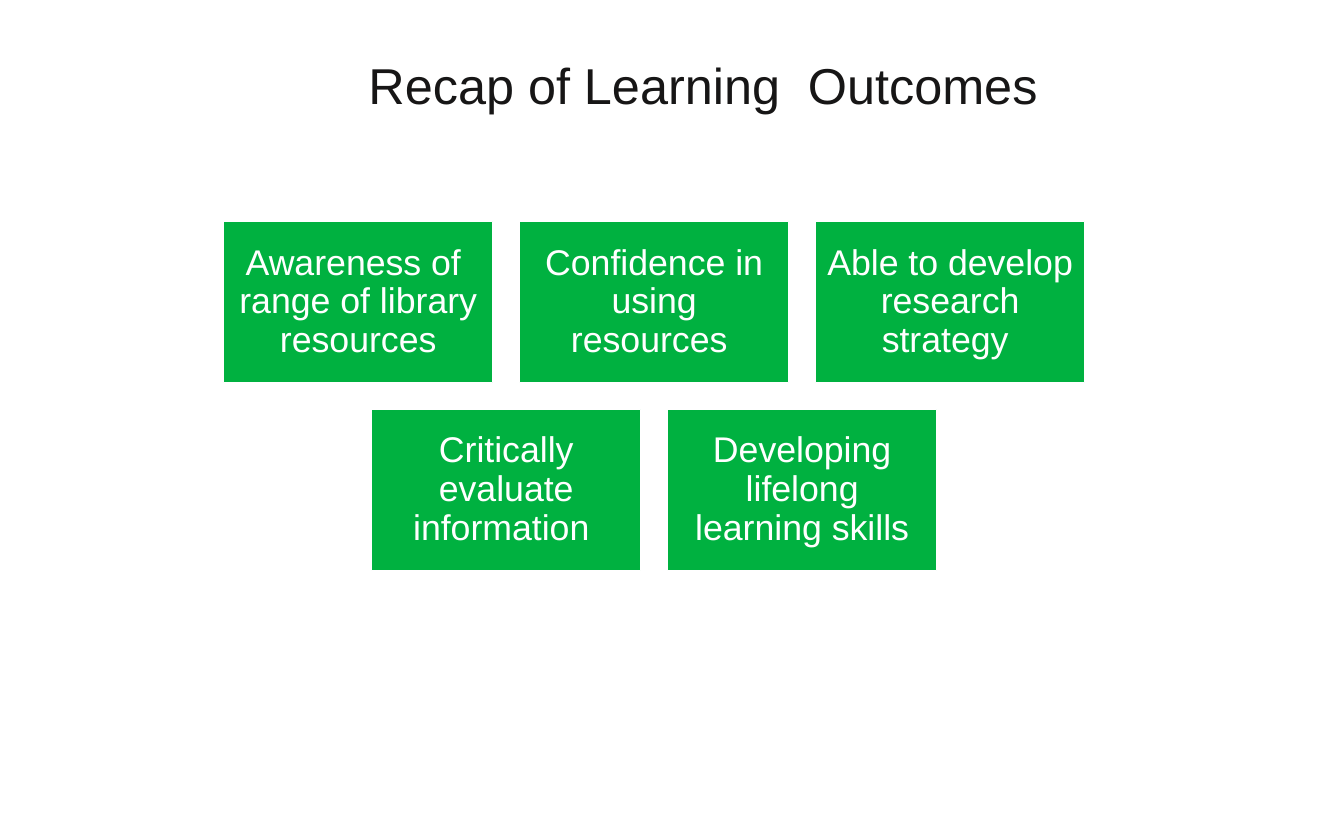
from dataclasses import dataclass

from pptx import Presentation
from pptx.dml.color import RGBColor as Rgb
from pptx.enum.shapes import MSO_SHAPE as Shape
from pptx.enum.text import MSO_ANCHOR as Anchor, MSO_AUTO_SIZE as Fit, PP_ALIGN as Align
from pptx.slide import Slide
from pptx.text.text import TextFrame
from pptx.util import Inches, Pt

COLORS = {"green": "00B140", "white": "FFFFFF", "ink": "171616"}
WIDE, HIGH, GAP = 3.56, 2.13, 0.355
MID, TOP = 8.655, 2.93


@dataclass
class Card:
    """One learning outcome and its place."""
    text: str
    left: float
    top: float


ROWS = [
    ["Awareness of  range of library resources",
     "Confidence in using resources ",
     "Able to develop research strategy "],
    ["Critically evaluate information ",
     "Developing lifelong learning skills"],
]


def write(frame: TextFrame, text: str, *, size: float, color: str,
          align: Align = Align.LEFT, anchor: Anchor = Anchor.TOP,
          space: float = 1.0, fit: Fit = Fit.NONE) -> None:
    """Put formatted text into a frame."""
    frame.word_wrap = True
    frame.auto_size = fit
    frame.vertical_anchor = anchor
    para = frame.paragraphs[0]
    para.alignment = align
    para.line_spacing = space
    run = para.add_run()
    run.text = text
    run.font.name = "Arial"
    run.font.size = Pt(size)
    run.font.color.rgb = Rgb.from_string(COLORS[color])


def place(rows: list[list[str]]) -> list[Card]:
    """Centre each row of cards on the same axis."""
    cards = []
    for row, texts in enumerate(rows):
        span = len(texts) * (WIDE + GAP) - GAP
        for col, text in enumerate(texts):
            left = MID - span / 2 + col * (WIDE + GAP)
            cards.append(Card(text, left, TOP + row * (HIGH + GAP)))
    return cards


def draw(slide: Slide, card: Card) -> None:
    """Draw one green card."""
    box = slide.shapes.add_shape(Shape.RECTANGLE, Inches(card.left), Inches(card.top),
                                 Inches(WIDE), Inches(HIGH))
    box.shadow.inherit = False
    box.fill.solid()
    box.fill.fore_color.rgb = Rgb.from_string(COLORS["green"])
    box.line.color.rgb = Rgb.from_string(COLORS["white"])
    box.line.width = Pt(0.85)
    frame = box.text_frame
    frame.margin_left = frame.margin_right = Inches(0.14)
    frame.margin_top = frame.margin_bottom = Inches(0.14)
    write(frame, card.text, size=34, color="white", align=Align.CENTER,
          anchor=Anchor.MIDDLE, space=0.9)


def main() -> None:
    """Build and save the slide."""
    deck = Presentation()
    deck.slide_width, deck.slide_height = Inches(17.78), Inches(11.11)
    slide = deck.slides.add_slide(deck.slide_layouts[5])
    title = slide.shapes.title
    title.left, title.top = Inches(4.59), Inches(0.66)
    title.width, title.height = Inches(9.35), Inches(0.91)
    write(title.text_frame, " Recap of Learning  Outcomes", size=48, color="ink",
          fit=Fit.SHAPE_TO_FIT_TEXT)
    for card in place(ROWS):
        draw(slide, card)
    deck.save("out.pptx")


if __name__ == "__main__":
    main()
